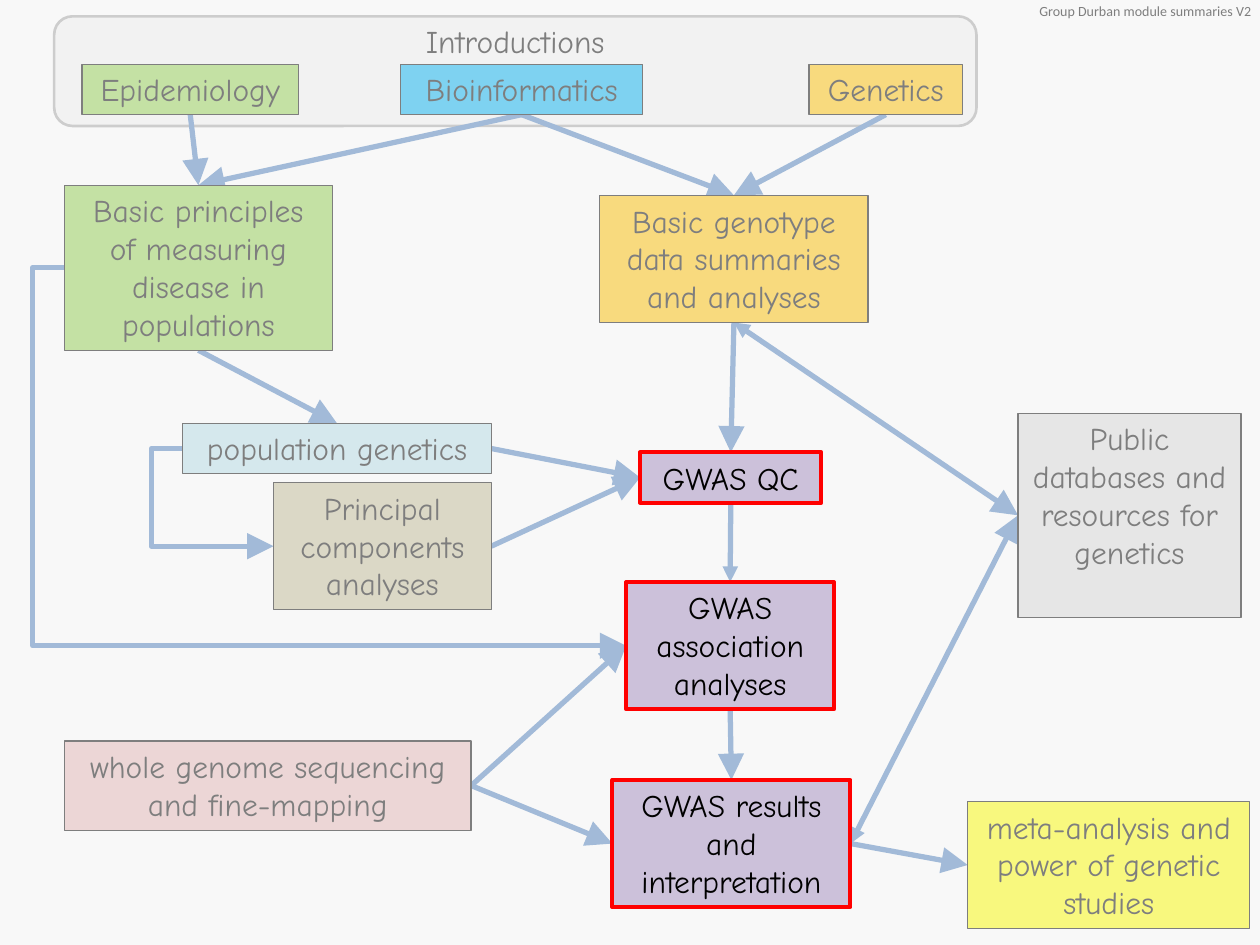
"""Build a one-slide flow chart of the genetics course modules."""
from dataclasses import dataclass
from typing import Optional

from lxml.etree import SubElement
from pptx import Presentation
from pptx.dml.color import RGBColor
from pptx.enum.shapes import MSO_CONNECTOR, MSO_SHAPE
from pptx.enum.text import MSO_ANCHOR, PP_ALIGN
from pptx.oxml.ns import qn
from pptx.util import Inches, Pt

COLOURS = {
    "panel": "F2F2F2", "panel edge": "A6A6A6", "black": "000000", "arrow": "4B7EBC",
    "green": "92D050", "blue": "00B0F0", "orange": "FFC000", "pale blue": "B7DEE8",
    "tan": "C4BD97", "pink": "E6B9B8", "grey": "D9D9D9", "yellow": "FFFF00",
    "lilac": "CCC1DA", "red": "FF0000",
}
DETOUR = 0.25


@dataclass(frozen=True)
class Module:
    label: str
    left: float
    top: float
    width: float
    height: float
    fill: str
    edge: str = "black"
    weight: float = 0.75
    wrap: bool = True

    def site(self, side: str) -> tuple[float, float]:
        across, down = {"top": (0.5, 0), "bottom": (0.5, 1),
                        "left": (0, 0.5), "right": (1, 0.5)}[side]
        return self.left + across * self.width, self.top + down * self.height


@dataclass(frozen=True)
class Arrow:
    source: str
    leaving: str
    target: str
    entering: str
    tail: str = "lg"
    head: Optional[str] = None
    bent: bool = False


LINE, THREE_LINES = 0.4, 1.01
MODULES = {
    "epidemiology": Module("Epidemiology", 0.65, 0.51, 1.72, LINE, "green", wrap=False),
    "bioinformatics": Module("Bioinformatics", 3.18, 0.51, 1.92, LINE, "blue", wrap=False),
    "genetics": Module("Genetics", 6.42, 0.51, 1.22, LINE, "orange", wrap=False),
    "principles": Module("Basic principles of measuring disease in populations",
                         0.51, 1.47, 2.13, 1.31, "green"),
    "genotype": Module("Basic genotype data summaries and analyses",
                       4.76, 1.55, 2.13, THREE_LINES, "orange"),
    "population": Module("population genetics", 1.45, 3.36, 2.45, LINE, "pale blue", wrap=False),
    "components": Module("Principal components analyses",
                         2.17, 3.83, 1.73, THREE_LINES, "tan"),
    "sequencing": Module("whole genome sequencing and fine-mapping",
                         0.51, 5.88, 3.23, 0.71, "pink"),
    "databases": Module("Public databases and resources for genetics",
                        8.08, 3.28, 1.77, 1.62, "grey"),
    "meta": Module("meta-analysis and power of genetic studies",
                   7.68, 6.36, 2.24, THREE_LINES, "yellow"),
}
HIGHLIGHTS = {
    "qc": Module("GWAS QC", 5.08, 3.59, 1.44, LINE, "lilac", "red", 2.25, wrap=False),
    "association": Module("GWAS association analyses",
                          4.97, 4.62, 1.65, THREE_LINES, "lilac", "red", 2.25),
    "results": Module("GWAS results and interpretation",
                      4.86, 6.19, 1.89, THREE_LINES, "lilac", "red", 2.25),
}
ARROWS = [
    Arrow("epidemiology", "bottom", "principles", "top"),
    Arrow("bioinformatics", "bottom", "principles", "top"),
    Arrow("bioinformatics", "bottom", "genotype", "top"),
    Arrow("genetics", "bottom", "genotype", "top"),
    Arrow("principles", "bottom", "population", "top"),
    Arrow("principles", "left", "association", "left", bent=True),
    Arrow("population", "left", "components", "left", bent=True),
    Arrow("population", "right", "qc", "left"),
    Arrow("components", "right", "qc", "left"),
    Arrow("genotype", "bottom", "qc", "top"),
    Arrow("genotype", "bottom", "databases", "left", head="med"),
    Arrow("qc", "bottom", "association", "top", tail="med"),
    Arrow("association", "bottom", "results", "top"),
    Arrow("sequencing", "right", "association", "left"),
    Arrow("sequencing", "right", "results", "left"),
    Arrow("results", "right", "databases", "left", head="med"),
    Arrow("results", "right", "meta", "left"),
]


def colour(name: str) -> RGBColor:
    return RGBColor.from_string(COLOURS[name])


def write_text(shape, words: str, *, size: float = 18, font: str = "Comic Neue",
               align=PP_ALIGN.CENTER, wrap: bool = True) -> None:
    frame = shape.text_frame
    frame.word_wrap = wrap
    frame.vertical_anchor = MSO_ANCHOR.TOP
    paragraph = frame.paragraphs[0]
    paragraph.alignment = align
    run = paragraph.add_run()
    run.text = words
    run.font.size = Pt(size)
    run.font.name = font
    run.font.color.rgb = colour("black")


def add_block(slide, kind, place: tuple, fill: str, edge: Optional[str] = None,
              weight: float = 0.75):
    shape = slide.shapes.add_shape(kind, *map(Inches, place))
    shape.shadow.inherit = False
    shape.fill.solid()
    shape.fill.fore_color.rgb = colour(fill)
    if edge:
        shape.line.color.rgb = colour(edge)
        shape.line.width = Pt(weight)
    else:
        shape.line.fill.background()
    return shape


def draw_module(slide, module: Module) -> None:
    place = (module.left, module.top, module.width, module.height)
    block = add_block(slide, MSO_SHAPE.RECTANGLE, place, module.fill,
                      module.edge, module.weight)
    write_text(block, module.label, wrap=module.wrap)


def draw_arrow(slide, arrow: Arrow, modules: dict[str, Module]) -> None:
    start = modules[arrow.source].site(arrow.leaving)
    end = modules[arrow.target].site(arrow.entering)
    kind = MSO_CONNECTOR.ELBOW if arrow.bent else MSO_CONNECTOR.STRAIGHT
    connector = slide.shapes.add_connector(kind, *map(Inches, start + end))
    connector.line.color.rgb = colour("arrow")
    connector.line.width = Pt(3)
    properties = connector._element.spPr
    if arrow.bent:
        bend = round(-DETOUR / (end[0] - start[0]) * 100000)
        guides = properties.find(qn("a:prstGeom")).get_or_add_avLst()
        SubElement(guides, qn("a:gd"), name="adj1", fmla=f"val {bend}")
    outline = properties.find(qn("a:ln"))
    for tag, size in (("a:headEnd", arrow.head), ("a:tailEnd", arrow.tail)):
        if size:
            SubElement(outline, qn(tag), type="triangle", w=size, len=size)
    SubElement(properties, qn("a:effectLst"))


def main() -> None:
    presentation = Presentation()
    presentation.slide_width, presentation.slide_height = Inches(10), Inches(7.5)
    slide = presentation.slides.add_slide(presentation.slide_layouts[6])

    introductions = add_block(slide, MSO_SHAPE.ROUNDED_RECTANGLE, (0.43, 0.13, 7.32, 0.87),
                              "panel", "panel edge", 1.5)
    write_text(introductions, "Introductions")
    introductions.text_frame.margin_top = 0

    for arrow in ARROWS:
        draw_arrow(slide, arrow, MODULES | HIGHLIGHTS)
    for module in MODULES.values():
        draw_module(slide, module)

    version = slide.shapes.add_textbox(*map(Inches, (8.15, -0.03, 2.2, 0.24)))
    write_text(version, "Group Durban module summaries V2", size=8, font="Calibri",
               align=PP_ALIGN.LEFT)

    veil = add_block(slide, MSO_SHAPE.RECTANGLE, (0, 0, 10, 7.5), "panel")
    tint = veil._element.spPr.find(qn("a:solidFill")).find(qn("a:srgbClr"))
    SubElement(tint, qn("a:alpha"), val="52000")

    for module in HIGHLIGHTS.values():
        draw_module(slide, module)
    presentation.save("out.pptx")


if __name__ == "__main__":
    main()
